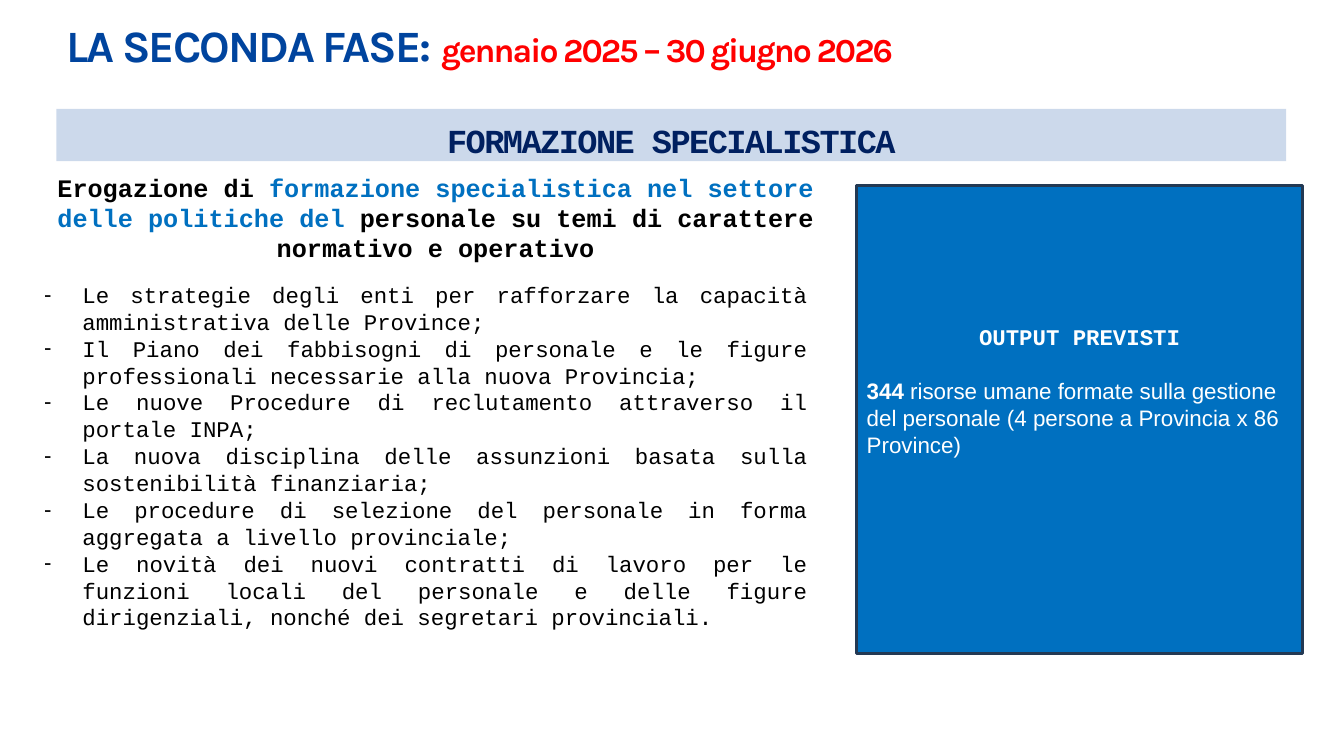
from dataclasses import dataclass

from lxml.etree import SubElement
from pptx import Presentation
from pptx.dml.color import RGBColor
from pptx.enum.shapes import MSO_SHAPE
from pptx.enum.text import MSO_ANCHOR as Anchor
from pptx.enum.text import MSO_AUTO_SIZE as AutoSize
from pptx.enum.text import PP_ALIGN as Align
from pptx.oxml.ns import qn
from pptx.shapes.autoshape import Shape
from pptx.slide import Slide
from pptx.util import Pt

COLOURS = {
    "blue": "00449E",
    "navy": "002060",
    "sky": "0070C0",
    "outline": "233953",
    "red": "FF0000",
    "black": "000000",
    "white": "FFFFFF",
}
MONO = "Courier New"
TOPICS = [
    "Le strategie degli enti per rafforzare la capacità amministrativa delle Province;",
    "Il Piano dei fabbisogni di personale e le figure professionali necessarie alla nuova Provincia;",
    "Le nuove Procedure di reclutamento attraverso il portale INPA;",
    "La nuova disciplina delle assunzioni basata sulla sostenibilità finanziaria;",
    "Le procedure di selezione del personale in forma aggregata a livello provinciale;",
    "Le novità dei nuovi contratti di lavoro per le funzioni locali del personale e delle figure "
    "dirigenziali, nonché dei segretari provinciali.",
]


@dataclass(frozen=True)
class Span:
    text: str
    size: float
    colour: str
    font: str = MONO
    bold: bool = True
    spacing: float = 0


@dataclass(frozen=True)
class Line:
    spans: list[Span]
    align: Align = Align.CENTER
    before: float = 0
    margin: float = 0
    bullet: bool = False


@dataclass(frozen=True)
class Block:
    box: tuple[float, float, float, float]
    lines: list[Line]
    insets: tuple[float, float, float, float] = (7.2, 3.6, 7.2, 3.6)
    anchor: Anchor = Anchor.MIDDLE
    grow: bool = False
    fill: str = ""
    opacity: int = 100
    outline: str = ""


TITLE = Block(
    (46.8, 12.24, 637.2, 39.6),
    [Line([Span("LA SECONDA FASE: ", 32, "blue", "Karla", spacing=-1.4),
           Span("gennaio 2025 – 30 giugno 2026", 24, "red", "Karla", spacing=-1.4)],
          Align.LEFT, before=1, margin=0.72)],
    insets=(0, 0.72, 0, 0), anchor=Anchor.TOP, grow=True,
)
BAND = Block(
    (40.32, 77.76, 878.4, 37.44),
    [Line([Span("FORMAZIONE SPECIALISTICA", 24, "navy", spacing=-1.1)], before=8.2)],
    insets=(0, 7.92, 0, 0), anchor=Anchor.TOP, grow=True, fill="blue", opacity=20,
)
INTRODUCTION = Block(
    (28.08, 123.84, 565.92, 62.64),
    [Line([Span("Erogazione di ", 18, "black"),
           Span("formazione specialistica nel settore delle politiche del ", 18, "sky"),
           Span("personale su temi di carattere normativo e operativo", 18, "black")], before=14)],
    fill="white",
)
OUTPUT = Block(
    (612, 132.48, 318.24, 334.08),
    [Line([Span("OUTPUT PREVISTI", 16, "white")]),
     Line([Span("344", 16, "white", "Arial"),
           Span(" risorse umane formate sulla gestione del personale (4 persone a Provincia x 86 Province)",
                16, "white", "Arial", bold=False)], Align.LEFT, before=19.2)],
    insets=(7.2, 3.6, 7.2, 44.4), fill="sky", outline="outline",
)
TOPIC_LIST = Block(
    (24.48, 197.28, 559.44, 262.08),
    [Line([Span(topic, 16, "black", bold=False)], Align.JUSTIFY, margin=27.36, bullet=True)
     for topic in TOPICS],
    anchor=Anchor.TOP, grow=True,
)


def colour_of(name: str) -> RGBColor:
    """Return the named colour."""
    return RGBColor.from_string(COLOURS[name])


def write_lines(shape: Shape, block: Block) -> None:
    """Fill the shape with the formatted lines of the block."""
    frame = shape.text_frame
    frame.word_wrap = True
    frame.vertical_anchor = block.anchor
    frame.auto_size = AutoSize.SHAPE_TO_FIT_TEXT if block.grow else AutoSize.NONE
    frame.margin_left, frame.margin_top, frame.margin_right, frame.margin_bottom = map(Pt, block.insets)
    for index, line in enumerate(block.lines):
        paragraph = frame.add_paragraph() if index else frame.paragraphs[0]
        paragraph.alignment = line.align
        paragraph.space_before = Pt(line.before)
        properties = paragraph._p.get_or_add_pPr()
        properties.set("marL", str(Pt(line.margin)))
        properties.set("indent", str(Pt(-line.margin if line.bullet else 0)))
        if line.bullet:
            SubElement(properties, qn("a:buFont"), typeface="Arial")
            SubElement(properties, qn("a:buChar"), char="-")
        for span in line.spans:
            run = paragraph.add_run()
            run.text = span.text
            run.font.name = span.font
            run.font.size = Pt(span.size)
            run.font.bold = span.bold
            run.font.color.rgb = colour_of(span.colour)
            if span.spacing:
                run._r.get_or_add_rPr().set("spc", str(round(span.spacing * 100)))


def add_panel(slide: Slide, block: Block) -> None:
    """Draw a filled rectangle with its text."""
    shape = slide.shapes.add_shape(MSO_SHAPE.RECTANGLE, *map(Pt, block.box))
    shape.shadow.inherit = False
    shape.fill.solid()
    shape.fill.fore_color.rgb = colour_of(block.fill)
    if block.opacity < 100:
        colour = shape._element.spPr.find(qn("a:solidFill")).find(qn("a:srgbClr"))
        SubElement(colour, qn("a:alpha"), val=str(block.opacity * 1000))
    if block.outline:
        shape.line.color.rgb = colour_of(block.outline)
        shape.line.width = Pt(2)
    else:
        shape.line.fill.background()
    write_lines(shape, block)


def main() -> None:
    """Build the slide and save it."""
    presentation = Presentation()
    presentation.slide_width, presentation.slide_height = Pt(960), Pt(540)
    slide = presentation.slides.add_slide(presentation.slide_layouts[5])
    title = slide.shapes.title
    title.left, title.top, title.width, title.height = map(Pt, TITLE.box)
    write_lines(title, TITLE)
    for block in (BAND, INTRODUCTION, OUTPUT):
        add_panel(slide, block)
    write_lines(slide.shapes.add_textbox(*map(Pt, TOPIC_LIST.box)), TOPIC_LIST)
    presentation.save("out.pptx")


if __name__ == "__main__":
    main()
